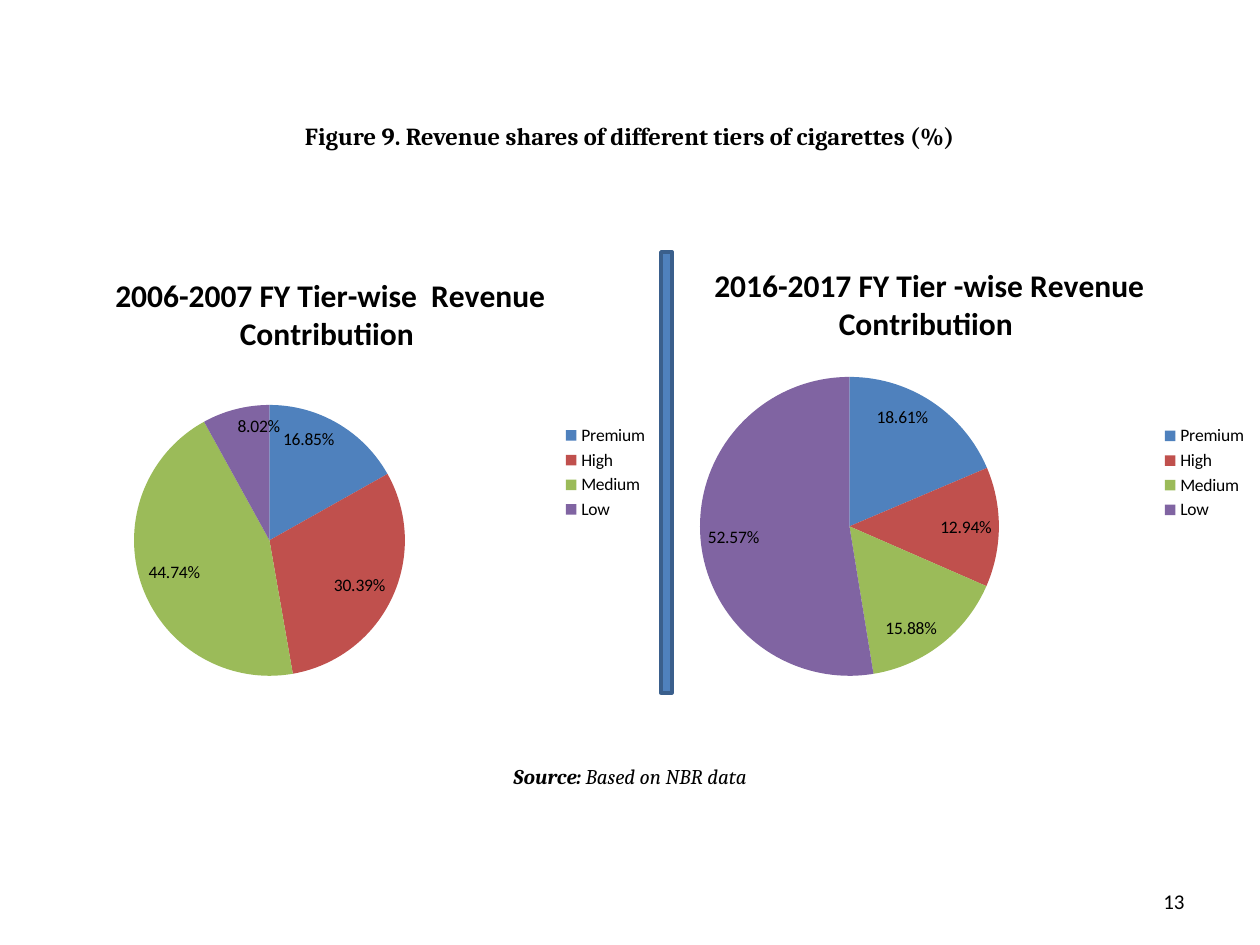
import pptx
import pptx.util
import pptx.chart.data
import pptx.dml.color
import pptx.enum.chart
import pptx.enum.shapes
import pptx.enum.text
import pptx.oxml

RGB = pptx.dml.color.RGBColor
BLACK = RGB(0x00, 0x00, 0x00)
BLUE = RGB(0x4F, 0x81, 0xBD)
RED = RGB(0xC0, 0x50, 0x4D)
GREEN = RGB(0x9B, 0xBB, 0x59)
PURPLE = RGB(0x80, 0x64, 0xA2)
NAVY = RGB(0x3A, 0x5F, 0x8C)

TIERS = {"Premium": BLUE, "High": RED, "Medium": GREEN, "Low": PURPLE}
ALIGN = pptx.enum.text.PP_ALIGN
CHART_NS = "http://schemas.openxmlformats.org/drawingml/2006/chart"
SCALE = 914400 / 126


def emu(px):
    return pptx.util.Emu(round(px * SCALE))


class Page:
    head = "Cambria"
    body = "Calibri"

    def __init__(self, deck):
        self.slide = deck.slides.add_slide(deck.slide_layouts[5])

    def font(self, font, name, size, bold=False, italic=False):
        font.name = name
        font.size = pptx.util.Pt(size)
        font.bold = bold
        font.italic = italic
        font.color.rgb = BLACK

    def place(self, shape, box):
        shape.left, shape.top, shape.width, shape.height = map(emu, box)

    def frame(self, shape, align):
        frame = shape.text_frame
        frame.word_wrap = True
        frame.auto_size = pptx.enum.text.MSO_AUTO_SIZE.NONE
        frame.vertical_anchor = pptx.enum.text.MSO_ANCHOR.MIDDLE
        frame.paragraphs[0].alignment = align
        return frame.paragraphs[0]

    def title(self, box, text):
        shape = self.slide.shapes.title
        self.place(shape, box)
        shape.text_frame.text = text
        para = self.frame(shape, ALIGN.CENTER)
        self.font(para.runs[0].font, self.head, 14, bold=True)

    def text(self, box, parts, align, name):
        """Each part is a pair of wording and font options."""
        shape = self.slide.shapes.add_textbox(*map(emu, box))
        para = self.frame(shape, align)
        for words, style in parts:
            run = para.add_run()
            run.text = words
            self.font(run.font, name, 12, **style)

    def bar(self, box):
        kind = pptx.enum.shapes.MSO_SHAPE.RECTANGLE
        shape = self.slide.shapes.add_shape(kind, *map(emu, box))
        shape.shadow.inherit = False
        shape.fill.solid()
        shape.fill.fore_color.rgb = BLUE
        shape.line.color.rgb = NAVY
        shape.line.width = pptx.util.Pt(2)

    def layout(self, parent, index, box, spot, inner=False):
        """Pin a chart part at a spot given in slide px."""
        for old in parent.findall(f"{{{CHART_NS}}}layout"):
            parent.remove(old)
        left, top, wide, high = box
        tags = '<c:layoutTarget val="inner"/>' if inner else ""
        tags += '<c:xMode val="edge"/><c:yMode val="edge"/>'
        ratios = [(spot[0] - left) / wide, (spot[1] - top) / high]
        ratios += [size / full for size, full in zip(spot[2:], box[2:])]
        for key, ratio in zip("xywh", ratios):
            tags += f'<c:{key} val="{ratio:.4f}"/>'
        parent.insert(index, pptx.oxml.parse_xml(
            f'<c:layout xmlns:c="{CHART_NS}"><c:manualLayout>{tags}'
            '</c:manualLayout></c:layout>'))

    def pie(self, box, disc, title, shares):
        data = pptx.chart.data.CategoryChartData(number_format="0.00%")
        data.categories = list(TIERS)
        data.add_series("Series 1", shares)
        kind = pptx.enum.chart.XL_CHART_TYPE.PIE
        chart = self.slide.shapes.add_chart(kind, *map(emu, box), data).chart
        self.font(chart.font, self.body, 10)

        # Title and legend
        chart.has_title = True
        chart.chart_title.include_in_layout = False
        frame = chart.chart_title.text_frame
        frame.text = title
        self.font(frame.paragraphs[0].runs[0].font, self.body, 18, bold=True)
        chart.has_legend = True
        chart.legend.position = pptx.enum.chart.XL_LEGEND_POSITION.RIGHT
        chart.legend.include_in_layout = False

        # Slices and labels
        plot = chart.plots[0]
        plot.vary_by_categories = True
        for index, color in enumerate(TIERS.values()):
            fill = plot.series[0].points[index].format.fill
            fill.solid()
            fill.fore_color.rgb = color
        plot.has_data_labels = True
        labels = plot.data_labels
        labels.show_value = True
        labels.show_percentage = False
        labels.number_format = "0.00%"
        labels.number_format_is_linked = False
        labels.position = pptx.enum.chart.XL_LABEL_POSITION.INSIDE_END
        self.font(labels.font, self.body, 10)
        area = chart.element.find(f".//{{{CHART_NS}}}plotArea")
        self.layout(area, 0, box, disc, inner=True)


def main():
    deck = pptx.Presentation()
    deck.slide_width = emu(1260)
    deck.slide_height = emu(945)
    page = Page(deck)

    # Heading
    page.title((105, 116, 1050, 40),
               "Figure 9. Revenue shares of different tiers of cigarettes (%)")

    # Two years side by side
    page.pie((0, 252, 661, 441), (134, 405, 271, 271),
             "2006-2007 FY Tier-wise  Revenue Contributiion ",
             (0.1685, 0.3039, 0.4474, 0.0802))
    page.pie((599, 242, 661, 462), (700, 377, 299, 299),
             "2016-2017 FY Tier -wise Revenue Contributiion ",
             (0.1861, 0.1294, 0.1588, 0.5257))
    page.bar((661, 252, 11, 441))

    # Source and page number
    page.text((105, 756, 1050, 40),
              [("Source: ", {"bold": True, "italic": True}),
               ("Based on NBR data", {"italic": True})],
              ALIGN.CENTER, page.head)
    page.text((903, 876, 294, 50), [("13", {})], ALIGN.RIGHT, page.body)

    deck.save("out.pptx")


if __name__ == "__main__":
    main()
